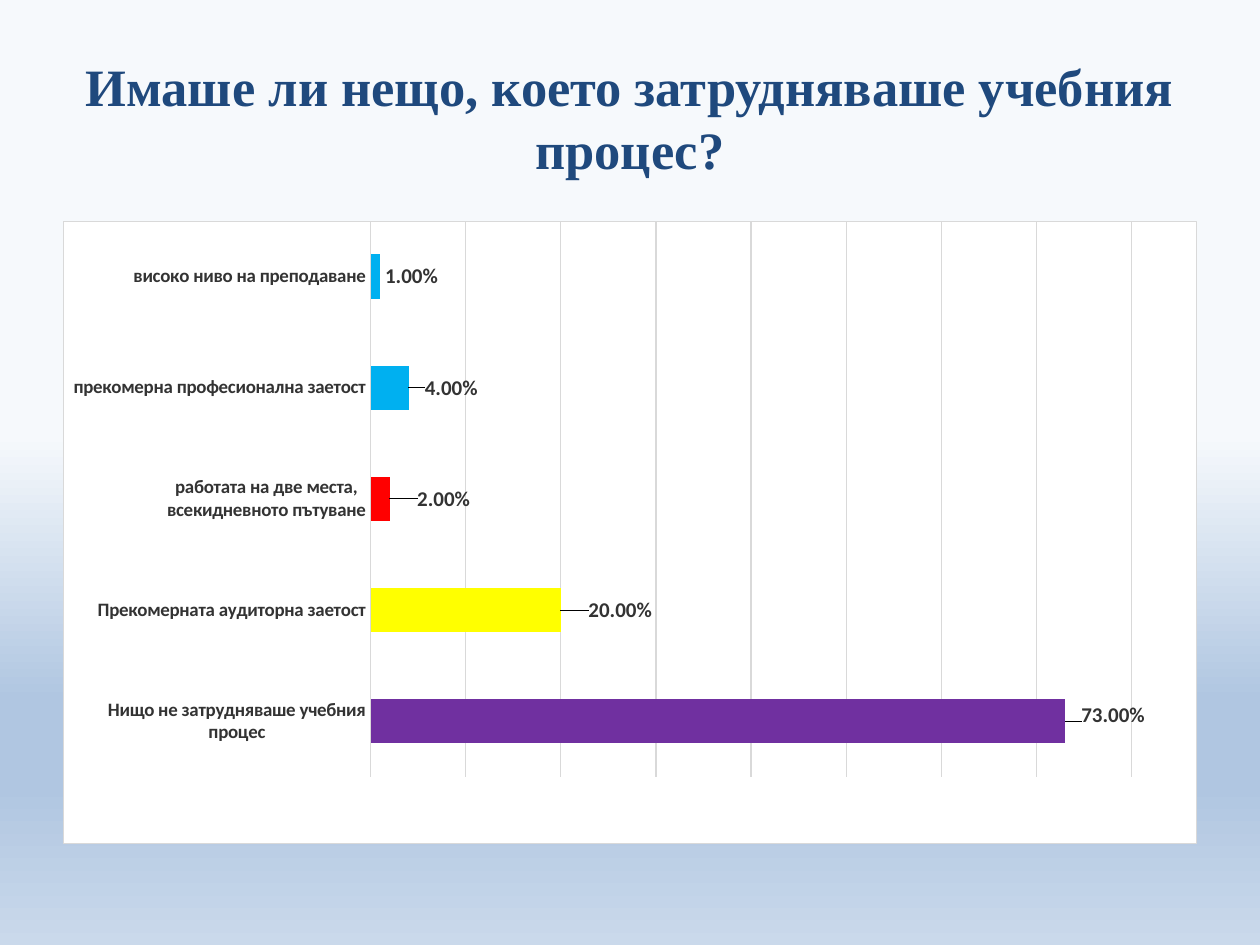
from dataclasses import dataclass

from lxml import etree
from pptx import Presentation
from pptx import util as u
from pptx.chart import data as cd
from pptx.dml.color import RGBColor
from pptx.enum import chart as ce, text
from pptx.oxml import parse_xml
from pptx.oxml.ns import nsdecls, qn

HUES = {
    "navy": "1F497D", "ink": "333333", "black": "000000", "white": "FFFFFF",
    "rule": "D9D9D9", "blue": "00B0F0", "red": "FF0000",
    "yellow": "FFFF00", "purple": "7030A0",
}
SKY = [(46, "F6F9FC"), (74, "B0C6E1"), (83, "B0C6E1"), (100, "CAD9EB")]
PLOT = {"x": 0.271, "y": 0, "w": 0.672, "h": 0.893}


@dataclass
class Bar:
    name: str
    share: float
    hue: str
    dx: float = 0  # label shift, as a share of the chart size
    dy: float = 0


BARS = [
    Bar("Нищо не затрудняваше учебния процес", 0.73, "purple", 0.01, -0.01),
    Bar("Прекомерната аудиторна заетост", 0.2, "yellow", 0.02),
    Bar("работата на две места, всекидневното пътуване", 0.02, "red", 0.02),
    Bar("прекомерна професионална заетост", 0.04, "blue", 0.01),
    Bar("високо ниво на преподаване", 0.01, "blue"),
]


def rgb(hue: str) -> RGBColor:
    return RGBColor.from_string(HUES[hue])


def style(font, size: float, hue: str, bold: bool = True, face: str = "Calibri") -> None:
    font.name, font.size, font.bold = face, u.Pt(size), bold
    font.color.rgb = rgb(hue)


def layout(modes: dict, spots: dict):
    """Make a manual c:layout from its mode and position values."""
    root = parse_xml(f"<c:layout {nsdecls('c')}><c:manualLayout/></c:layout>")
    for tag, val in {**modes, **spots}.items():
        etree.SubElement(root[0], qn(f"c:{tag}")).set("val", str(val))
    return root


def paint(slide) -> None:
    """Fill the background with the sky gradient, top to bottom."""
    fill = slide.background.fill
    fill.gradient()
    fill.gradient_angle = 270
    stops = slide.element.find(".//" + qn("a:gsLst"))
    for old in list(stops):
        stops.remove(old)
    for pos, hue in SKY:
        stops.append(parse_xml(
            f'<a:gs {nsdecls("a")} pos="{pos * 1000}"><a:srgbClr val="{hue}"/></a:gs>'))


def title(slide, words: str) -> None:
    box = slide.shapes.add_textbox(u.Inches(0.5), u.Inches(0.3), u.Inches(9), u.Inches(1.25))
    frame = box.text_frame
    frame.word_wrap = True
    frame.vertical_anchor = text.MSO_ANCHOR.MIDDLE
    para = frame.paragraphs[0]
    para.alignment = text.PP_ALIGN.CENTER
    run = para.add_run()
    run.text = words
    style(run.font, 30, "navy", face="Times New Roman")


def frame(chart) -> None:
    """Give the chart its fill and border, and place the plot area."""
    root = chart.element
    root.find(qn("c:txPr")).addprevious(parse_xml(
        f'<c:spPr {nsdecls("c", "a")}>'
        f'<a:solidFill><a:srgbClr val="{HUES["white"]}"/></a:solidFill>'
        f'<a:ln w="{u.Pt(0.75)}"><a:solidFill><a:srgbClr val="{HUES["rule"]}"/>'
        "</a:solidFill></a:ln></c:spPr>"))
    area = root.find(".//" + qn("c:plotArea"))
    for old in area.findall(qn("c:layout")):
        area.remove(old)
    modes = {"layoutTarget": "inner", "xMode": "edge", "yMode": "edge"}
    area.insert(0, layout(modes, PLOT))


def axes(chart) -> None:
    cat, val = chart.category_axis, chart.value_axis
    cat.major_tick_mark = ce.XL_TICK_MARK.NONE
    cat.format.line.fill.background()
    style(cat.tick_labels.font, 10.8, "ink")
    val.visible = False
    val.minimum_scale, val.maximum_scale, val.major_unit = 0, 0.8, 0.1
    val.has_major_gridlines = True
    line = val.major_gridlines.format.line
    line.width, line.color.rgb = u.Pt(0.75), rgb("rule")


def bars(chart) -> None:
    plot = chart.plots[0]
    plot.gap_width, plot.vary_by_categories = 150, False
    row = plot.series[0]
    row.format.fill.solid()
    row.format.fill.fore_color.rgb = rgb("blue")
    tags = row.data_labels
    tags.show_value = True
    tags.number_format, tags.number_format_is_linked = "0.00%", False
    tags.position = ce.XL_LABEL_POSITION.OUTSIDE_END
    style(tags.font, 12, "ink")
    for i, bar in enumerate(BARS):
        point = row.points[i]
        if bar.hue != "blue":
            point.format.fill.solid()
            point.format.fill.fore_color.rgb = rgb(bar.hue)
        if bar.dx:
            tag = point.data_label
            style(tag.font, 12, "ink")
            tag.position = ce.XL_LABEL_POSITION.OUTSIDE_END
            mark = tags._element.findall(qn("c:dLbl"))[-1]
            mark.find(qn("c:idx")).addnext(layout({}, {"x": bar.dx, "y": bar.dy}))


def graph(slide) -> None:
    data = cd.CategoryChartData(number_format="0.00%")
    data.categories = [bar.name for bar in BARS]
    data.add_series("Series 1", [bar.share for bar in BARS])
    chart = slide.shapes.add_chart(
        ce.XL_CHART_TYPE.BAR_CLUSTERED, u.Inches(0.5), u.Inches(1.75),
        u.Inches(9), u.Inches(4.95), data).chart
    chart.has_legend = chart.has_title = False
    style(chart.font, 10, "black", bold=False)
    frame(chart)
    axes(chart)
    bars(chart)


def main() -> None:
    deck = Presentation()
    deck.slide_width, deck.slide_height = u.Inches(10), u.Inches(7.5)
    slide = deck.slides.add_slide(deck.slide_layouts[6])
    paint(slide)
    title(slide, "Имаше ли нещо, което затрудняваше учебния процес?")
    graph(slide)
    deck.save("out.pptx")


if __name__ == "__main__":
    main()
